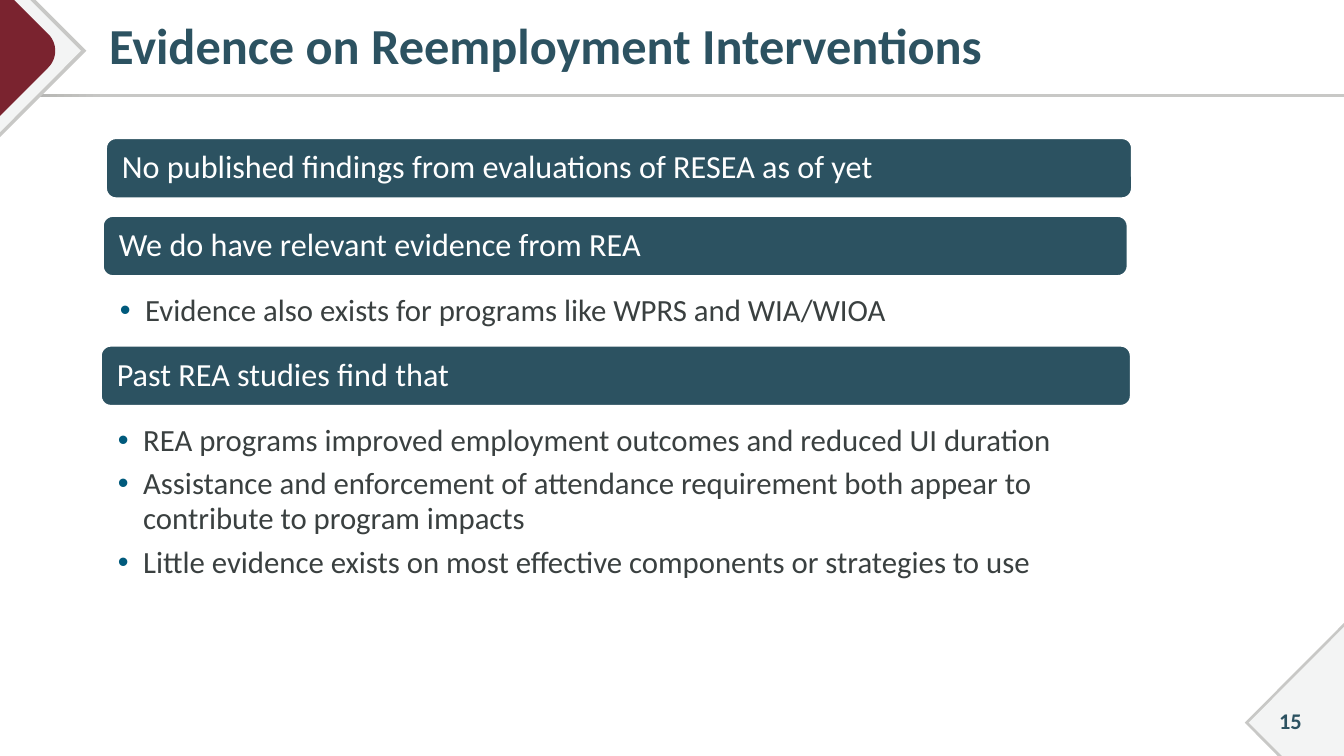
from lxml import etree
from pptx import Presentation
from pptx import util as u
from pptx.dml.color import RGBColor
from pptx.enum import shapes, text
from pptx.oxml.ns import qn

FONT = "Calibri"
TEAL, RED, GREY, PALE, WHITE = "2C5261", "7A232F", "C8C8C6", "F3F4F4", "FFFFFF"
INK, BULLET = "3A4040", "005A7C"
INSET = 0.25
WIDTH, HEIGHT = 33.87, 19.05


def rgb(value):
    return RGBColor.from_string(value)


def add_bullet(p):
    pPr = p._p.get_or_add_pPr()
    pPr.set("marL", str(u.Cm(0.64)))
    pPr.set("indent", str(u.Cm(-0.64)))
    color = etree.SubElement(pPr, qn("a:buClr"))
    etree.SubElement(color, qn("a:srgbClr")).set("val", BULLET)
    etree.SubElement(pPr, qn("a:buFont")).set("typeface", "Arial")
    etree.SubElement(pPr, qn("a:buChar")).set("char", "•")


def write(sp, *lines, size, color, bold=False, bullet=False, spacing=1.0,
          align=text.PP_ALIGN.LEFT, anchor=text.MSO_ANCHOR.MIDDLE, left=INSET):
    tf = sp.text_frame
    tf.word_wrap = True
    tf.vertical_anchor = anchor
    tf.margin_left = u.Cm(left)
    for i, line in enumerate(lines):
        p = tf.add_paragraph() if i else tf.paragraphs[0]
        if bullet:
            add_bullet(p)
        p.alignment = align
        p.line_spacing = spacing
        if i:
            p.space_before = u.Pt(6)
        r = p.add_run()
        r.text = line
        r.font.name, r.font.size, r.font.bold = FONT, u.Pt(size), bold
        r.font.color.rgb = rgb(color)


def add_text(s, box, *lines, **fmt):
    write(s.shapes.add_textbox(*map(u.Cm, box)), *lines, **fmt)


def add_bullets(s, box, *lines):
    add_text(s, box, *lines, size=22, color=INK, bullet=True, spacing=0.95,
             anchor=text.MSO_ANCHOR.TOP)


def add_bar(s, left, top, width, label):
    sp = s.shapes.add_shape(shapes.MSO_SHAPE.ROUNDED_RECTANGLE,
                            *map(u.Cm, (left, top, width, 1.52)))
    sp.shadow.inherit = False
    sp.fill.solid()
    sp.fill.fore_color.rgb = rgb(TEAL)
    sp.line.color.rgb = rgb(WHITE)
    sp.line.width = u.Pt(1.5)
    write(sp, label, size=23, color=WHITE, spacing=0.9, left=0.33)


def add_polygon(s, points, color):
    """Draw a closed outline through points given in centimetres."""
    start, *rest = [(u.Cm(x), u.Cm(y)) for x, y in points]
    builder = s.shapes.build_freeform(*start)
    builder.add_line_segments(rest)
    sp = builder.convert_to_shape()
    sp.shadow.inherit = False
    sp.fill.solid()
    sp.fill.fore_color.rgb = rgb(color)
    sp.line.fill.background()


def curve(a, b, c, d, steps=16):
    """Return points along a cubic curve from a to d."""
    points = []
    for i in range(steps + 1):
        t = i / steps
        weights = ((1 - t) ** 3, 3 * t * (1 - t) ** 2, 3 * t * t * (1 - t), t ** 3)
        points.append(tuple(sum(w * q[axis] for w, q in zip(weights, (a, b, c, d)))
                            for axis in (0, 1)))
    return points


def add_title_rule(s):
    sp = s.shapes.add_shape(shapes.MSO_SHAPE.RECTANGLE,
                            *map(u.Cm, (0, 2.37, WIDTH, 0.08)))
    sp.shadow.inherit = False
    sp.line.fill.background()
    sp.fill.gradient()
    sp.fill.gradient_angle = 0
    for stop, position, color in zip(sp.fill.gradient_stops, (0, 0.08), ("ABABA8", GREY)):
        stop.position = position
        stop.color.rgb = rgb(color)


def add_corners(s):
    for top_x, tip_x, bottom, color in ((0.9, 2.18, 3.46, GREY), (0.76, 2.04, 3.33, PALE)):
        add_polygon(s, [(0, 0), (top_x, 0), (tip_x, 1.28), (0, bottom)], color)
    tip = curve((1.22, 0.86), (1.45, 1.09), (1.45, 1.47), (1.22, 1.7))
    add_polygon(s, [(0, 0), (0.36, 0), *tip, (0, 2.92)], RED)
    for top, base_x, tip_x, color in ((15.7, 32.2, 31.37, GREY), (15.8, 32.31, 31.47, PALE)):
        add_polygon(s, [(WIDTH, top), (WIDTH, HEIGHT), (base_x, HEIGHT), (tip_x, 18.21)], color)


def main():
    prs = Presentation()
    prs.slide_width, prs.slide_height = u.Cm(WIDTH), u.Cm(HEIGHT)
    s = prs.slides.add_slide(prs.slide_layouts[6])

    add_title_rule(s)
    add_corners(s)
    add_text(s, (31.62, 17.65, 1.8, 1.02), "15", size=16, color=TEAL, bold=True,
             align=text.PP_ALIGN.CENTER)
    add_text(s, (2.24, 0.13, 30.78, 2.18), "Evidence on Reemployment Interventions",
             size=36, color=TEAL, bold=True, spacing=0.9, left=0.51)

    add_bar(s, 2.67, 3.48, 25.86, "No published findings from evaluations of RESEA as of yet")
    add_bar(s, 2.59, 5.44, 25.83, "We do have relevant evidence from REA")
    add_bullets(s, (2.77, 7.26, 24.13, 1.22),
                "Evidence also exists for programs like WPRS and WIA/WIOA")
    add_bar(s, 2.54, 8.71, 25.96, "Past REA studies find that")
    add_bullets(s, (2.72, 10.54, 25.86, 4.24),
                "REA programs improved employment outcomes and reduced UI duration",
                "Assistance and enforcement of attendance requirement both appear to "
                "contribute to program impacts",
                "Little evidence exists on most effective components or strategies to use")

    prs.save("out.pptx")


if __name__ == "__main__":
    main()
